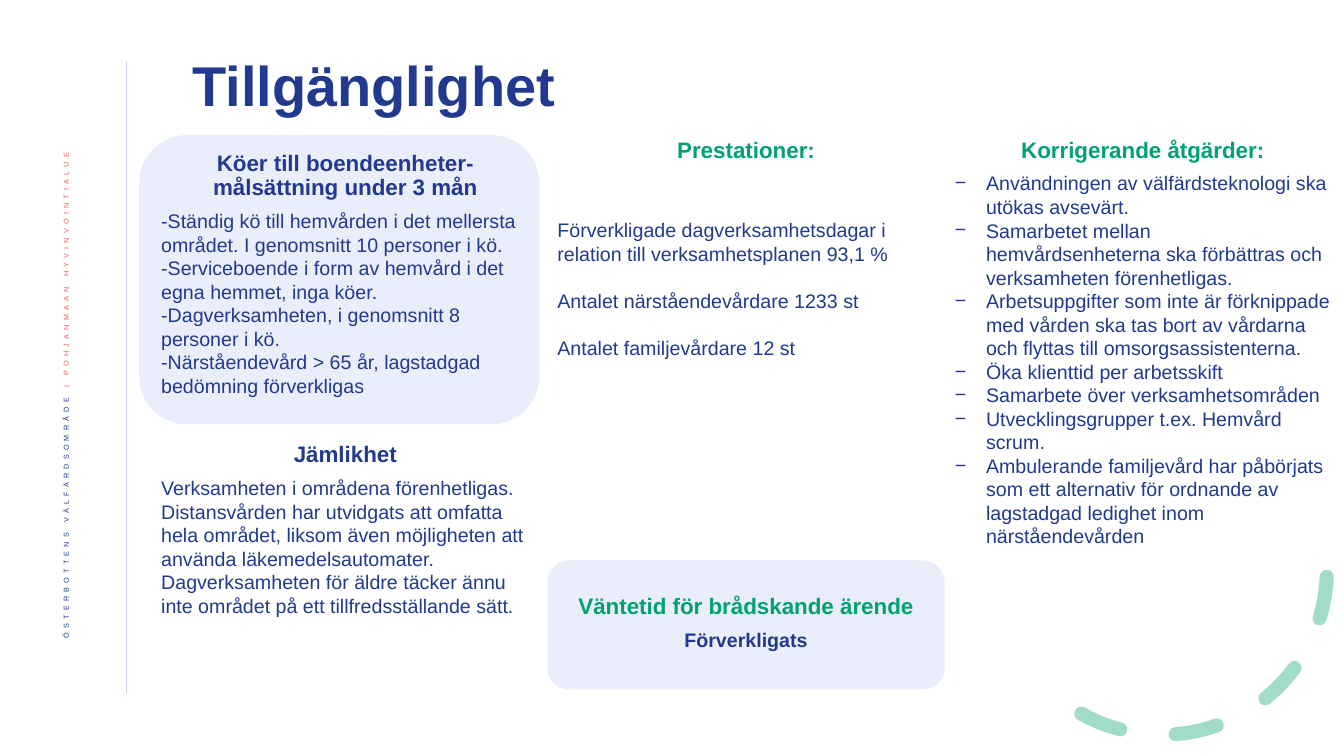
import pptx
import pptx.util
import pptx.dml.color
import pptx.enum.dml
import pptx.enum.shapes
import pptx.enum.text
import pptx.oxml
import pptx.oxml.ns
from pptx.util import Inches, Pt

# ---- Content ----
NAVY, GREEN, CORAL, LILAC = "213A8F", "00A174", "EB5C5F", "C9D2F2"

TITLE = "Tillgänglighet"
SIDE_TEXT = [("ÖSTERBOTTENS VÄLFÄRDSOMRÅDE ", NAVY),
             ("| POHJANMAAN HYVINVOINTIALUE", CORAL)]

QUEUES = ("Köer till boendeenheter- målsättning under 3 mån", [
    "-Ständig kö till hemvården i det mellersta området. I genomsnitt 10 personer i kö.",
    "-Serviceboende i form av hemvård i det egna hemmet, inga köer.",
    "-Dagverksamheten, i genomsnitt 8 personer i kö.",
    "-Närståendevård > 65 år, lagstadgad bedömning förverkligas"])
EQUALITY = ("Jämlikhet", [
    "Verksamheten i områdena förenhetligas. Distansvården har utvidgats att omfatta hela "
    "området, liksom även möjligheten att använda läkemedelsautomater.",
    "Dagverksamheten för äldre täcker ännu inte området på ett tillfredsställande sätt."])
RESULTS = ("Prestationer:", [
    "Förverkligade dagverksamhetsdagar i relation till verksamhetsplanen 93,1 %",
    "Antalet närståendevårdare 1233 st",
    "Antalet familjevårdare 12 st"])
WAITING = ("Väntetid för brådskande ärende", ["Förverkligats"])
ACTIONS = ("Korrigerande åtgärder:", [
    "Användningen av välfärdsteknologi ska utökas avsevärt.",
    "Samarbetet mellan hemvårdsenheterna ska förbättras och verksamheten förenhetligas.",
    "Arbetsuppgifter som inte är förknippade med vården ska tas bort av vårdarna och "
    "flyttas till omsorgsassistenterna.",
    "Öka klienttid per arbetsskift",
    "Samarbete över verksamhetsområden",
    "Utvecklingsgrupper t.ex. Hemvård scrum.",
    "Ambulerande familjevård har påbörjats som ett alternativ för ordnande av lagstadgad "
    "ledighet inom närståendevården"])

# ---- Layout: three columns ----
LEFT_X, LEFT_W = 1.5, 3.85
COL_W = 3.94
MID_X = 5.43
RIGHT_X, RIGHT_W = MID_X + COL_W, 3.93
LINE_GAP = 16.8  # points, one empty line of body text

CENTER = pptx.enum.text.PP_ALIGN.CENTER
LEFT = pptx.enum.text.PP_ALIGN.LEFT
MIDDLE = pptx.enum.text.MSO_ANCHOR.MIDDLE
SHAPES = pptx.enum.shapes.MSO_SHAPE


def rgb(color):
    return pptx.dml.color.RGBColor.from_string(color)


def box(*lengths):
    return [Inches(v) for v in lengths]


def place(sp, *lengths):
    sp.left, sp.top, sp.width, sp.height = box(*lengths)


def sub(parent, tag, **attrs):
    el = pptx.oxml.ns.qn(tag)
    child = parent.makeelement(el, attrs)
    parent.append(child)
    return child


def set_alpha(fill_parent, percent):
    clr = next(fill_parent.iter(pptx.oxml.ns.qn("a:srgbClr")))
    sub(clr, "a:alpha", val=str(percent * 1000))


def add_run(p, text, size, color, bold=False):
    r = p.add_run()
    r.text = text
    for name, value in {"name": "Arial", "size": Pt(size), "bold": bold}.items():
        setattr(r.font, name, value)
    r.font.color.rgb = rgb(color)
    return r


def set_paragraph(p, **values):
    for name, value in values.items():
        setattr(p, name, value)


def fill_text(sp, content, color, spacing=1.0, gaps=(), bullet=None, body_bold=False):
    """Centred bold heading followed by body paragraphs."""
    heading, lines = content
    tf = sp.text_frame
    tf.word_wrap = True
    tf.vertical_anchor = pptx.enum.text.MSO_ANCHOR.TOP
    tf.auto_size = pptx.enum.text.MSO_AUTO_SIZE.SHAPE_TO_FIT_TEXT
    for i, text in enumerate([heading] + lines):
        p = tf.paragraphs[0] if i == 0 else tf.add_paragraph()
        is_body = i > 0
        ppr = p._p.get_or_add_pPr()
        indent = Inches(0.31) if bullet and is_body else 0
        ppr.set("marL", str(indent))
        ppr.set("indent", str(-indent))
        set_paragraph(p, alignment=LEFT if is_body and not body_bold else CENTER,
                      line_spacing=1.0 if is_body else spacing,
                      space_before=Pt(gaps[i - 1] if is_body and gaps else 0),
                      space_after=Pt(0 if is_body else 6))
        if bullet and is_body:
            sub(ppr, "a:buFont", typeface="Arial")
            sub(ppr, "a:buChar", char=bullet)
        else:
            sub(ppr, "a:buNone")
        add_run(p, text, 14 if is_body else 16, NAVY if is_body else color,
                body_bold or not is_body)


prs = pptx.Presentation()
prs.slide_width, prs.slide_height = box(13.33, 7.5)
s = prs.slides.add_slide(prs.slide_layouts[1])
title, actions = s.placeholders

# ---- Side rule and vertical name ----
rule = s.shapes.add_connector(pptx.enum.shapes.MSO_CONNECTOR.STRAIGHT,
                              *box(1.25, 0.61, 1.25, 6.88))
rule.line.color.rgb = rgb(LILAC)
rule.line.width = Pt(0.5)
sub(rule._element.spPr, "a:effectLst")

side = s.shapes.add_textbox(*box(0.42, 1.42, 0.52, 5.73))
tf = side.text_frame
tf.word_wrap = True
tf.vertical_anchor = MIDDLE
tf._txBody.bodyPr.set("vert", "vert270")
set_paragraph(tf.paragraphs[0], alignment=pptx.enum.text.PP_ALIGN.RIGHT, line_spacing=0.9)
for text, color in SIDE_TEXT:
    rpr = add_run(tf.paragraphs[0], text, 9, color)._r.get_or_add_rPr()
    rpr.set("baseline", "30000")
    rpr.set("spc", "300")

# ---- Dashed arc in the lower right corner, clockwise from 2.4 to 120 degrees ----
arc = s.shapes.add_shape(SHAPES.ARC, *box(9.89, 4.02, 3.27, 3.27))
arc.shadow.inherit = False
for i, degrees in enumerate((2.4, 120)):
    arc.adjustments[i] = degrees * 0.6
arc.fill.background()
arc.line.color.rgb = rgb(GREEN)
arc.line.width = Pt(10)
arc.line.dash_style = pptx.enum.dml.MSO_LINE.DASH
ln = arc.line._get_or_add_ln()
ln.set("cap", "rnd")
set_alpha(ln, 36)

# ---- Title ----
place(title, 1.81, 0.45, 10.2, 0.85)
title.text_frame.vertical_anchor = MIDDLE
set_paragraph(title.text_frame.paragraphs[0], alignment=LEFT, line_spacing=0.9)
add_run(title.text_frame.paragraphs[0], TITLE, 40, NAVY, True)

# ---- Panels ----
for panel in ((1.38, 1.34, 3.97, 2.87), (MID_X, 5.56, COL_W, 1.28)):
    sp = s.shapes.add_shape(SHAPES.ROUNDED_RECTANGLE, *box(*panel))
    sp.shadow.inherit = False
    sp.fill.solid()
    sp.fill.fore_color.rgb = rgb(LILAC)
    set_alpha(sp._element.spPr, 38)
    sp.line.fill.background()

# ---- Text blocks ----
for content, place_at, options in (
        (QUEUES, (LEFT_X, 1.46, LEFT_W, 2.55), {"color": NAVY, "spacing": 0.9}),
        (EQUALITY, (LEFT_X, 4.35, LEFT_W, 1.84), {"color": NAVY, "spacing": 0.9}),
        (RESULTS, (MID_X, 1.3, COL_W, 2.81),
         {"color": GREEN, "gaps": (2 * LINE_GAP, LINE_GAP, LINE_GAP)}),
        (WAITING, (MID_X, 5.83, COL_W, 0.69), {"color": GREEN, "body_bold": True})):
    fill_text(s.shapes.add_textbox(*box(*place_at)), content, **options)

place(actions, RIGHT_X, 1.3, RIGHT_W, 4.53)
fill_text(actions, ACTIONS, GREEN, bullet="−")

prs.save("out.pptx")
